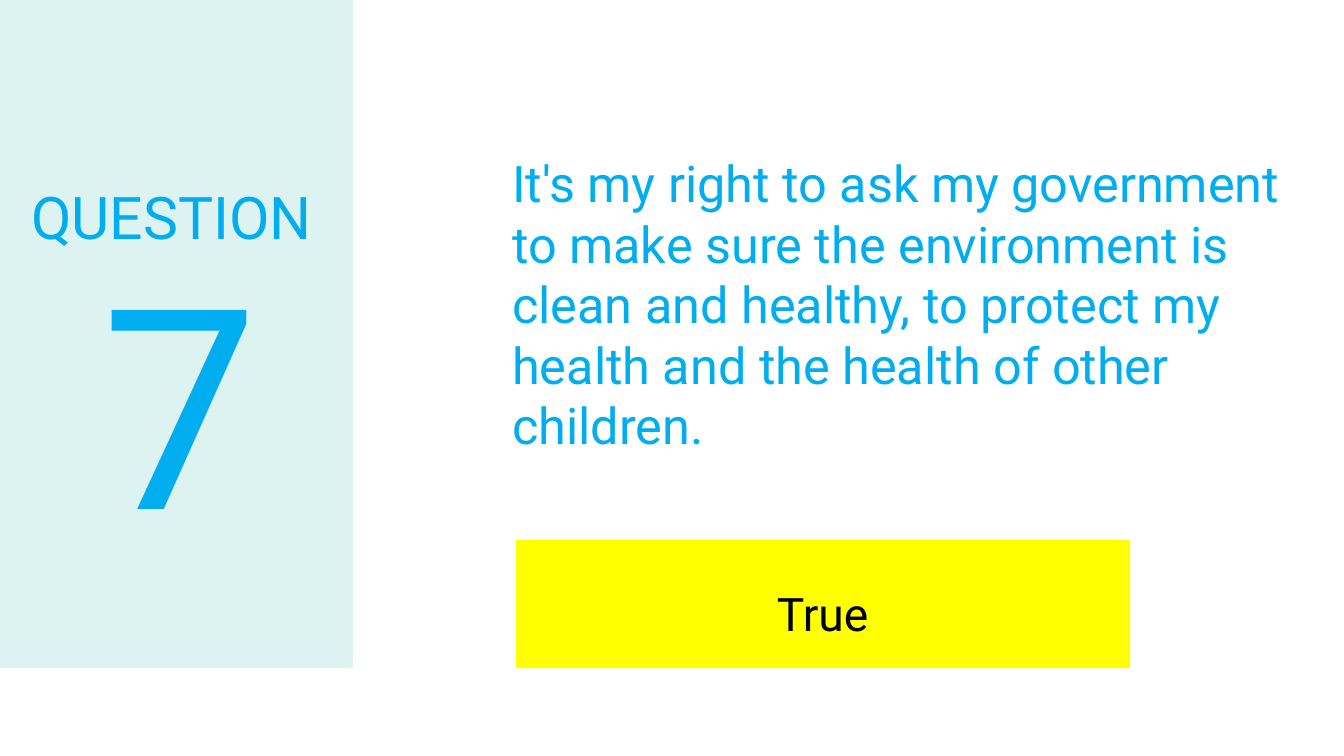
"""Build a quiz slide with a question, its number and the answer."""
from dataclasses import dataclass

from pptx import Presentation
from pptx import util as u
from pptx.dml.color import RGBColor
from pptx.enum import shapes, text

SCALE = 9144
FONT = "Roboto"
BLUE = RGBColor(0x00, 0xAE, 0xEF)
MINT = RGBColor(0xDD, 0xF3, 0xF1)
YELLOW = RGBColor(0xFF, 0xFF, 0x00)
BLACK = RGBColor(0x00, 0x00, 0x00)
LEFT, CENTER = text.PP_ALIGN.LEFT, text.PP_ALIGN.CENTER
TOP, MIDDLE = text.MSO_ANCHOR.TOP, text.MSO_ANCHOR.MIDDLE


@dataclass(frozen=True)
class Box:
    """A place on the slide in px."""
    x: int
    y: int
    w: int
    h: int


@dataclass(frozen=True)
class Panel:
    """A filled rectangle."""
    box: Box
    fill: RGBColor


@dataclass(frozen=True)
class Label:
    """A text with its place and format."""
    box: Box
    words: str
    size: int
    color: RGBColor = BLUE
    align: text.PP_ALIGN = LEFT
    anchor: text.MSO_ANCHOR = MIDDLE
    inset: int = 5
    lines: float = 0.9


TITLE = Label(
    Box(498, 141, 785, 323),
    "It's my right to ask my government to make sure the environment is "
    "clean and healthy, to protect my health and the health of other children.",
    36, anchor=TOP, inset=10, lines=1.0)
PANELS = [
    Panel(Box(0, 0, 350, 663), MINT),
    Panel(Box(512, 536, 609, 127), YELLOW),
]
LABELS = [
    Label(Box(26, 168, 334, 101), "QUESTION", 42),
    Label(Box(26, 259, 305, 312), "7", 200, align=CENTER),
    Label(Box(512, 562, 608, 76), "True", 33, color=BLACK, align=CENTER,
          anchor=TOP, inset=10, lines=1.15),
]


def px(n: int) -> u.Emu:
    """Turn px into EMU."""
    return u.Emu(n * SCALE)


def place(shape, box: Box) -> None:
    """Move and size a shape."""
    shape.left, shape.top = px(box.x), px(box.y)
    shape.width, shape.height = px(box.w), px(box.h)


def write(shape, words: str, *, size: int, color: RGBColor,
          align: text.PP_ALIGN, anchor: text.MSO_ANCHOR,
          inset: int, lines: float) -> None:
    """Put formatted text in a shape."""
    frame = shape.text_frame
    frame.word_wrap = True
    frame.auto_size = text.MSO_AUTO_SIZE.NONE
    frame.vertical_anchor = anchor
    frame.margin_left = frame.margin_right = px(inset)
    frame.margin_top = frame.margin_bottom = px(inset)
    para = frame.paragraphs[0]
    para.alignment = align
    para.line_spacing = lines
    run = para.add_run()
    run.text = words
    run.font.name = FONT
    run.font.size = u.Pt(size)
    run.font.color.rgb = color


def label(shape, item: Label) -> None:
    """Place a text shape and fill it."""
    place(shape, item.box)
    write(shape, item.words, size=item.size, color=item.color,
          align=item.align, anchor=item.anchor, inset=item.inset,
          lines=item.lines)


def panel(slide, item: Panel) -> None:
    """Draw a plain rectangle."""
    shape = slide.shapes.add_shape(shapes.MSO_SHAPE.RECTANGLE, 0, 0, 0, 0)
    place(shape, item.box)
    shape.shadow.inherit = False
    shape.fill.solid()
    shape.fill.fore_color.rgb = item.fill
    shape.line.fill.background()


def main() -> None:
    """Build and save the slide."""
    deck = Presentation()
    deck.slide_width, deck.slide_height = px(1333), px(750)
    slide = deck.slides.add_slide(deck.slide_layouts[5])
    label(slide.shapes.title, TITLE)
    for item in PANELS:
        panel(slide, item)
    for item in LABELS:
        label(slide.shapes.add_textbox(0, 0, 0, 0), item)
    deck.save("out.pptx")


if __name__ == "__main__":
    main()
